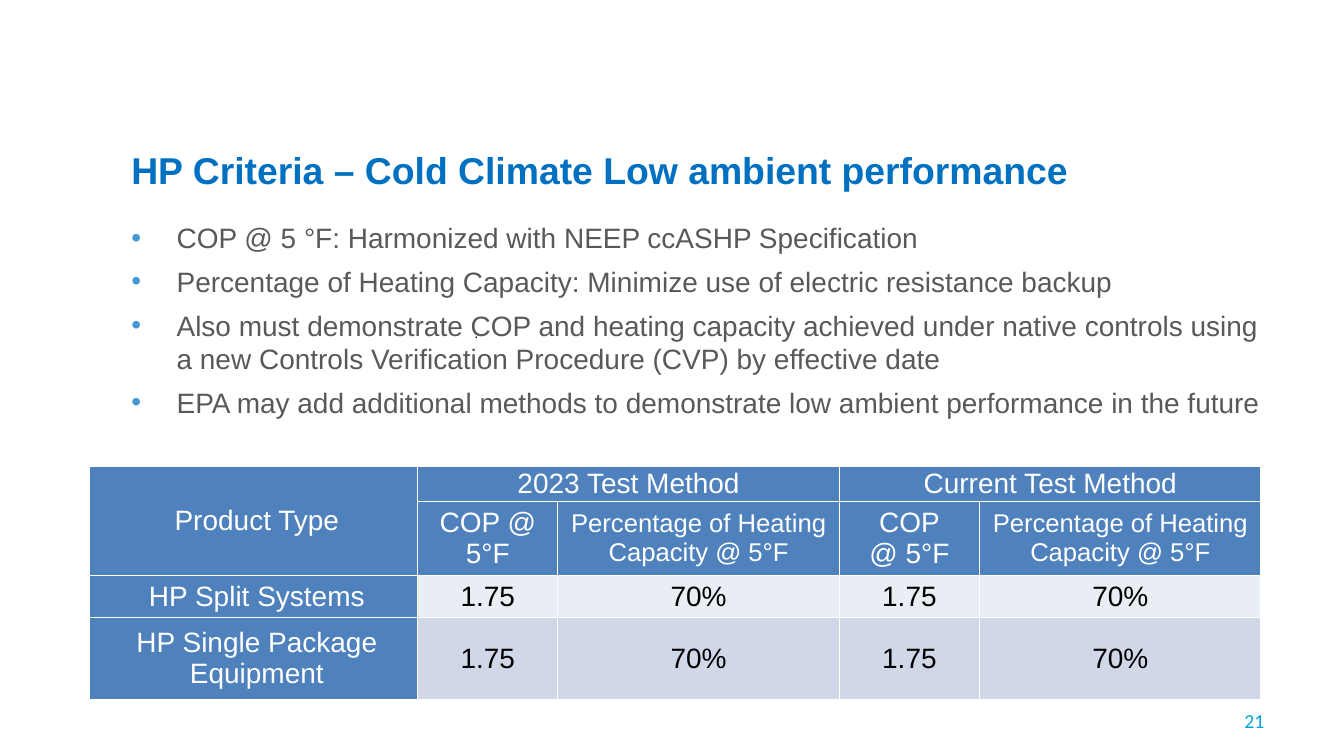
from dataclasses import dataclass

import pptx
import pptx.dml.color
import pptx.enum.text
import pptx.oxml
import pptx.oxml.ns
import pptx.util

Cm = pptx.util.Cm
Align = pptx.enum.text.PP_ALIGN
Anchor = pptx.enum.text.MSO_ANCHOR

COLORS = {
    "title": "0070C0",
    "body": "595959",
    "bullet": "4498D5",
    "number": "00A3DB",
    "header": "4F81BD",
    "light_row": "E9EDF4",
    "dark_row": "D0D8E8",
    "white": "FFFFFF",
    "black": "000000",
}
NAMESPACE = pptx.oxml.ns.nsdecls("a")

CRITERIA = [
    "COP @ 5 °F: Harmonized with NEEP ccASHP Specification",
    "Percentage of Heating Capacity: Minimize use of electric resistance backup",
    "Also must demonstrate COP and heating capacity achieved under native controls "
    "using a new Controls Verification Procedure (CVP) by effective date",
    "EPA may add additional methods to demonstrate low ambient performance in the future",
]


@dataclass
class CellSpec:
    row: int
    column: int
    lines: list[str]
    fill: str = "header"
    color: str = "white"
    size: float = 24
    indent: float = 0
    rows: int = 1
    columns: int = 1


def write(frame, lines: list[str], *, size: float, color: str, font: str = "Arial",
          bold: bool = False, align=Align.LEFT, gap: float = 0,
          bullet: str | None = None, hanging: float = 0) -> None:
    for index, line in enumerate(lines):
        paragraph = frame.paragraphs[0] if index == 0 else frame.add_paragraph()
        if bullet:
            properties = paragraph._p.get_or_add_pPr()
            properties.set("marL", str(Cm(hanging)))
            properties.set("indent", str(-Cm(hanging)))
            for xml in (
                f'<a:buClr {NAMESPACE}><a:srgbClr val="{COLORS[bullet]}"/></a:buClr>',
                f'<a:buFont {NAMESPACE} typeface="Arial"/>',
                f'<a:buChar {NAMESPACE} char="•"/>',
            ):
                properties.append(pptx.oxml.parse_xml(xml))
        paragraph.alignment = align
        paragraph.line_spacing = 1.0
        paragraph.space_before = pptx.util.Pt(gap if index else 0)
        run = paragraph.add_run()
        run.text = line
        run.font.name = font
        run.font.size = pptx.util.Pt(size)
        run.font.bold = bold
        run.font.color.rgb = pptx.dml.color.RGBColor.from_string(COLORS[color])


def place(shape, left: float, top: float, width: float, height: float,
          anchor=Anchor.MIDDLE, side: float = 0.36, wrap: bool = True):
    shape.left, shape.top, shape.width, shape.height = map(Cm, (left, top, width, height))
    frame = shape.text_frame
    frame.auto_size = pptx.enum.text.MSO_AUTO_SIZE.NONE
    frame.word_wrap = wrap
    frame.vertical_anchor = anchor
    frame.margin_left = frame.margin_right = Cm(side)
    frame.margin_top = frame.margin_bottom = Cm(side / 2)
    return frame


def style_cell(cell, fill: str) -> None:
    properties = cell._tc.get_or_add_tcPr()
    for side in ("lnL", "lnR", "lnT", "lnB"):
        properties.append(pptx.oxml.parse_xml(
            f'<a:{side} {NAMESPACE} w="12700"><a:solidFill>'
            f'<a:srgbClr val="{COLORS["white"]}"/></a:solidFill></a:{side}>'))
    cell.fill.solid()
    cell.fill.fore_color.rgb = pptx.dml.color.RGBColor.from_string(COLORS[fill])


def draw_cell(table, spec: CellSpec) -> None:
    cell = table.cell(spec.row, spec.column)
    last_row, last_column = spec.row + spec.rows, spec.column + spec.columns
    for row in range(spec.row, last_row):
        for column in range(spec.column, last_column):
            style_cell(table.cell(row, column), spec.fill)
    if spec.rows * spec.columns > 1:
        cell.merge(table.cell(last_row - 1, last_column - 1))
    cell.margin_right = cell.margin_top = cell.margin_bottom = 0
    cell.margin_left = Cm(spec.indent)
    cell.vertical_anchor = Anchor.MIDDLE
    write(cell.text_frame, spec.lines, size=spec.size, color=spec.color, align=Align.CENTER)


def performance_cells() -> list[CellSpec]:
    cells = [CellSpec(0, 0, ["Product Type"], indent=0.18, rows=2)]
    methods = [
        (1, "2023 Test Method", ["COP @ 5°F"]),
        (3, "Current Test Method", ["COP", "@ 5°F"]),
    ]
    for column, method, cop in methods:
        cells += [
            CellSpec(0, column, [method], columns=2),
            CellSpec(1, column, cop),
            CellSpec(1, column + 1, ["Percentage of Heating Capacity @ 5°F"], size=22),
        ]
    products = [
        (2, "HP Split Systems", "light_row"),
        (3, "HP Single Package Equipment", "dark_row"),
    ]
    for row, product, fill in products:
        cells.append(CellSpec(row, 0, [product], indent=0.18))
        for column, value in enumerate(["1.75", "70%"] * 2, start=1):
            cells.append(CellSpec(row, column, [value], fill, "black"))
    return cells


def main() -> None:
    presentation = pptx.Presentation()
    presentation.slide_width, presentation.slide_height = Cm(40.64), Cm(22.86)
    slide = presentation.slides.add_slide(presentation.slide_layouts[1])

    title = place(slide.shapes.title, 3.61, 4.24, 37.03, 1.8)
    write(title, ["HP Criteria – Cold Climate Low ambient performance"],
          size=32, color="title", bold=True)

    criteria = place(slide.placeholders[1], 3.61, 6.5, 35, 13.92, anchor=Anchor.TOP)
    write(criteria, CRITERIA, size=24, color="body", gap=8.6, bullet="bullet", hanging=1.37)

    page_number = place(slide.shapes.add_textbox(0, 0, 0, 0), 36.47, 21.18, 2.13, 1.22)
    write(page_number, ["21"], size=17, color="number", font="Calibri", align=Align.RIGHT)

    dot = place(slide.shapes.add_textbox(0, 0, 0, 0), 14.05, 9.65, 0.71, 0.81,
                side=0.3, wrap=False)
    write(dot, ["."], size=12, color="black", font="Calibri")

    widths = [9.91] + [4.24, 8.51] * 2
    heights = [1.04, 2.24, 1.27, 2.49]
    performance = slide.shapes.add_table(
        len(heights), len(widths), Cm(2.72), Cm(14.12), Cm(sum(widths)), Cm(sum(heights))).table
    for column, width in zip(performance.columns, widths):
        column.width = Cm(width)
    for row, height in zip(performance.rows, heights):
        row.height = Cm(height)
    for spec in performance_cells():
        draw_cell(performance, spec)

    presentation.save("out.pptx")


if __name__ == "__main__":
    main()
